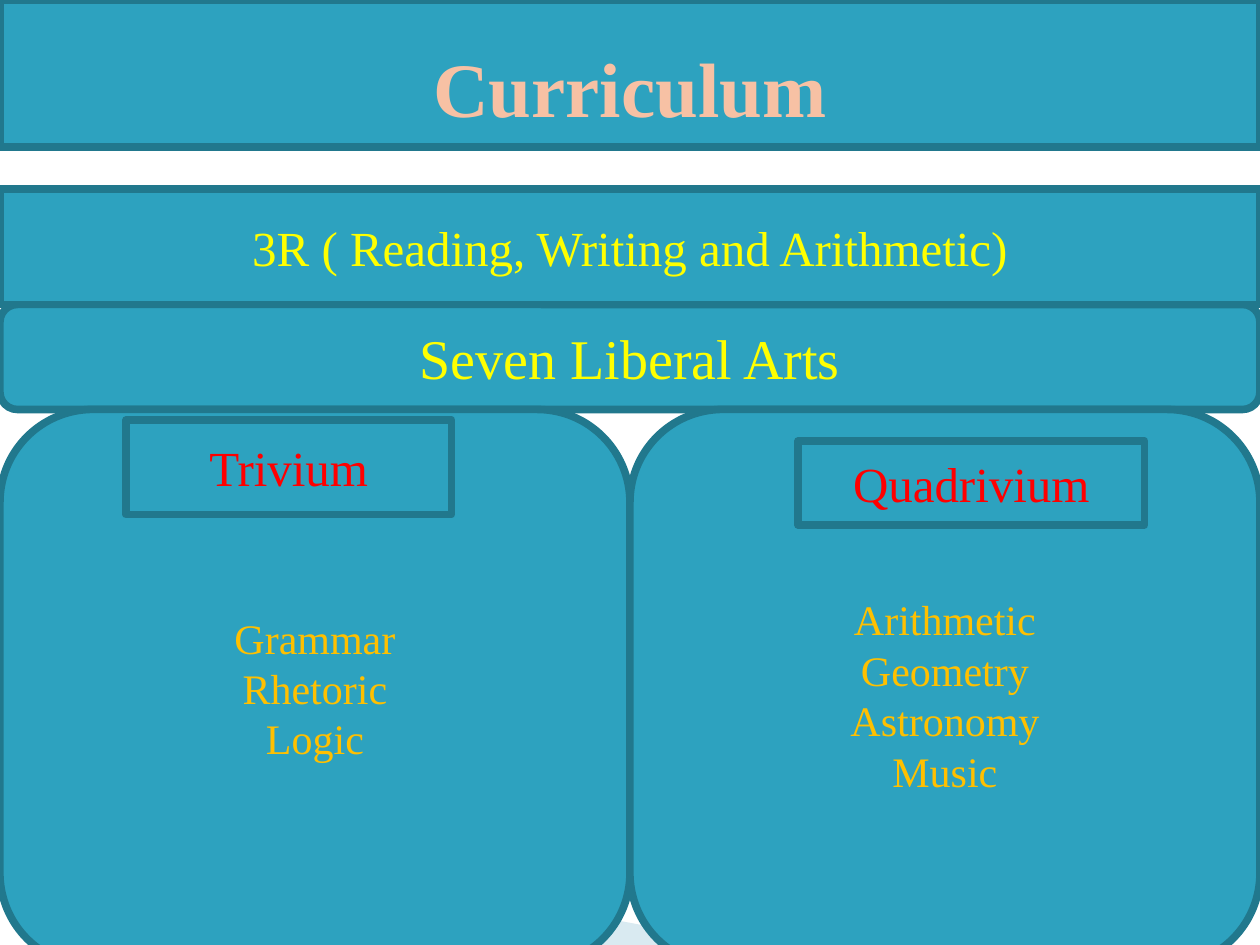
from dataclasses import dataclass

from lxml import etree
from pptx import Presentation
from pptx.dml.color import RGBColor
from pptx.enum.shapes import MSO_SHAPE
from pptx.enum.text import MSO_ANCHOR, PP_ALIGN
from pptx.oxml.ns import qn
from pptx.util import Pt

RECT = MSO_SHAPE.RECTANGLE
ROUND = MSO_SHAPE.ROUNDED_RECTANGLE
MIDDLE = MSO_ANCHOR.MIDDLE
CENTER = PP_ALIGN.CENTER


@dataclass(frozen=True)
class Theme:
    """Colours, type sizes and line width of the slide."""
    font: str = "Times New Roman"
    fill: str = "2DA2BF"
    line: str = "21788D"
    wedge: str = "A0CBDC"
    title: str = "F7C1A4"
    band: str = "FFFF00"
    heading: str = "FF0000"
    item: str = "FFC000"
    title_size: int = 44
    arts_size: int = 32
    heading_size: int = 28
    item_size: int = 24
    line_width: float = 4.33


def write(sp, text, font, size, color, bold=False, drop=0):
    """Write centred lines into a shape, moved down by a drop in points."""
    tf = sp.text_frame
    tf.word_wrap = True
    tf.vertical_anchor = MIDDLE
    tf.margin_top = Pt(3.6 + 2 * drop)
    for i, line in enumerate(text.split("\n")):
        p = tf.add_paragraph() if i else tf.paragraphs[0]
        p.alignment = CENTER
        r = p.add_run()
        r.text = line
        r.font.name = font
        r.font.size = Pt(size)
        r.font.bold = bold
        r.font.color.rgb = RGBColor.from_string(color)


class SlideBuilder:
    """Draw styled elements on the current slide."""

    def __init__(self, s, theme):
        """Keep the slide and its theme."""
        self.s = s
        self.theme = theme

    def box(self, kind, x, y, w, h, text="", **style):
        """Add a filled, outlined box with optional text."""
        sp = self.s.shapes.add_shape(kind, Pt(x), Pt(y), Pt(w), Pt(h))
        sp.shadow.inherit = False
        sp.fill.solid()
        sp.fill.fore_color.rgb = RGBColor.from_string(self.theme.fill)
        sp.line.color.rgb = RGBColor.from_string(self.theme.line)
        sp.line.width = Pt(self.theme.line_width)
        if text:
            write(sp, text, self.theme.font, **style)

    def label(self, x, y, w, h, text, **style):
        """Add a plain text box."""
        sp = self.s.shapes.add_textbox(Pt(x), Pt(y), Pt(w), Pt(h))
        write(sp, text, self.theme.font, **style)

    def wedge(self, points, alpha):
        """Add a translucent polygon, with alpha in percent."""
        start, *rest = [(Pt(x), Pt(y)) for x, y in points]
        fb = self.s.shapes.build_freeform(*start)
        fb.add_line_segments(rest)
        sp = fb.convert_to_shape()
        sp.shadow.inherit = False
        sp.line.fill.background()
        sp.fill.solid()
        sp.fill.fore_color.rgb = RGBColor.from_string(self.theme.wedge)
        color = sp.fill._xPr.find(".//" + qn("a:srgbClr"))
        etree.SubElement(color, qn("a:alpha"), val=str(alpha * 1000))


def main():
    """Build the curriculum slide."""
    width, height = 720, 540
    half = width / 2
    t = Theme()
    prs = Presentation()
    prs.slide_width, prs.slide_height = Pt(width), Pt(height)
    b = SlideBuilder(prs.slides.add_slide(prs.slide_layouts[6]), t)
    heading = {"size": t.heading_size, "color": t.heading}
    item = {"size": t.item_size, "color": t.item}

    b.wedge([(39.6, 468), (428.4, height), (328.3, height)], alpha=40)
    b.box(RECT, 0, 0, width, 84)
    b.label(36, 21.6, 648, 56, "Curriculum",
            size=t.title_size, color=t.title, bold=True)
    b.box(ROUND, 0, 174, width, 60, "Seven Liberal Arts",
          size=t.arts_size, color=t.band)
    b.box(ROUND, 0, 234, half, 318, "Grammar\nRhetoric\nLogic", **item)
    b.box(ROUND, half, 234, half, 318,
          "Arithmetic\nGeometry\nAstronomy\nMusic", drop=4, **item)
    b.box(RECT, 72, 240, 186, 54, "Trivium", **heading)
    b.box(RECT, 456, 252, 198, 48, "Quadrivium", **heading)
    b.box(RECT, 0, 108, width, 66, "3R ( Reading, Writing and Arithmetic)",
          size=t.heading_size, color=t.band)
    prs.save("out.pptx")


if __name__ == "__main__":
    main()
